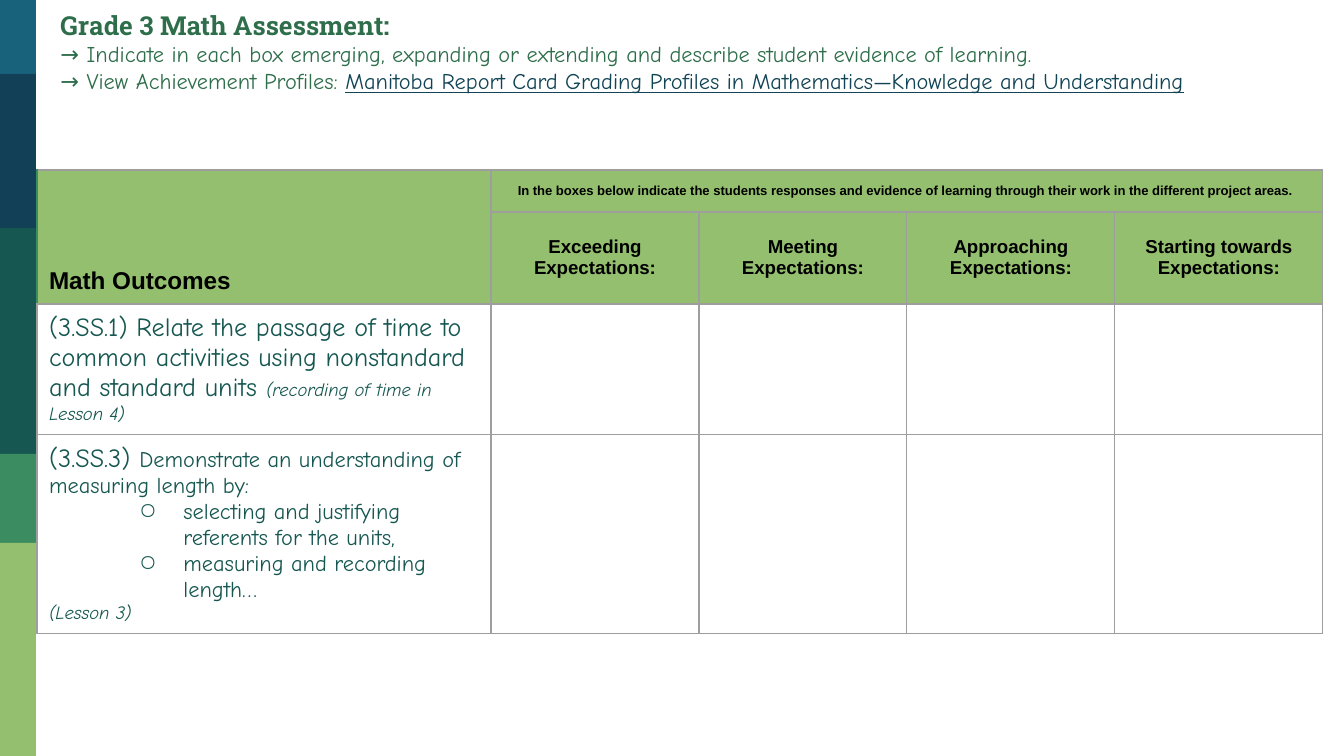
from lxml import etree
from pptx import Presentation
from pptx import util as u
from pptx.dml.color import RGBColor
from pptx.enum import shapes, text
from pptx.oxml import ns

WIDTH, HEIGHT = 1344, 756
SCALE = 9144000 / WIDTH  # EMU in one px

COLOURS = {
    "blue": "18637B", "navy": "124057", "pine": "165751", "jade": "3B8D61",
    "lime": "94BF6E", "title": "2E6E4B", "link": "114454",
    "grid": "9E9E9E", "black": "000000",
}
HEADINGS = ["Exceeding", "Meeting", "Approaching", "Starting towards"]


def px(length):
    return u.Emu(round(length * SCALE))


def colour(name):
    return RGBColor.from_string(COLOURS[name])


def write(para, spans, font, shade, **common):
    """Fill a paragraph with (words, format) spans."""
    for words, own in spans:
        span = para.add_run()
        span.text = words
        look = {"bold": False, **common, **own}
        span.font.name = font
        span.font.size = u.Pt(look["size"])
        span.font.bold = look["bold"]
        span.font.italic = look.get("italic", False)
        span.font.underline = look.get("underline", False)
        span.font.color.rgb = colour(look.get("shade", shade))


def add_sidebar(page, left, top, width):
    bands = [("blue", 0, 78), ("navy", 74, 156), ("pine", 228, 226),
             ("jade", 454, 89), ("lime", 543, 213)]
    for name, offset, height in bands:
        band = page.shapes.add_shape(shapes.MSO_SHAPE.RECTANGLE, px(left), px(top + offset),
                                     px(width), px(height))
        band.shadow.inherit = False
        band.fill.solid()
        band.fill.fore_color.rgb = colour(name)
        band.line.fill.background()


def add_title(page, left, top, width, height):
    title = page.shapes.title
    title.left, title.top = px(left), px(top)
    title.width, title.height = px(width), px(height)
    frame = title.text_frame
    frame.word_wrap = True
    frame.auto_size = text.MSO_AUTO_SIZE.NONE
    frame.vertical_anchor = text.MSO_ANCHOR.MIDDLE
    frame.margin_left = frame.margin_right = u.Inches(0.1)
    frame.margin_top = frame.margin_bottom = u.Inches(0.1)
    lines = [
        ("Roboto Slab", [("Grade 3 Math Assessment:", {"size": 14, "bold": True})]),
        ("Comic Neue", [("→ Indicate in each box emerging, expanding or extending and "
                         "describe student evidence of learning.", {})]),
        ("Comic Neue", [("→ View Achievement Profiles: ", {}),
                        ("Manitoba Report Card Grading Profiles in Mathematics—Knowledge "
                         "and Understanding", {"shade": "link", "underline": True})]),
    ]
    for index, (font, spans) in enumerate(lines):
        para = frame.add_paragraph() if index else frame.paragraphs[0]
        para.alignment = text.PP_ALIGN.LEFT
        write(para, spans, font, "title", size=12)


def add_bullet(para):
    props = para._p.get_or_add_pPr()
    props.set("marL", str(u.Inches(1)))
    props.set("indent", str(u.Inches(-0.33)))
    shade = etree.SubElement(props, ns.qn("a:buClr"))
    etree.SubElement(shade, ns.qn("a:srgbClr"), val=COLOURS["pine"])
    etree.SubElement(props, ns.qn("a:buChar"), char="○")


def set_borders(cell, left="grid"):
    props = cell._tc.get_or_add_tcPr()
    sides = [("lnL", left), ("lnR", "grid"), ("lnT", "grid"), ("lnB", "grid")]
    for index, (side, name) in enumerate(sides):
        line = etree.Element(ns.qn("a:" + side), w=str(u.Pt(0.75)))
        fill = etree.SubElement(line, ns.qn("a:solidFill"))
        etree.SubElement(fill, ns.qn("a:srgbClr"), val=COLOURS[name])
        props.insert(index, line)


def format_cell(cell, row, column):
    cell.margin_left = cell.margin_right = u.Inches(0.09)
    cell.margin_top = cell.margin_bottom = u.Inches(0.07)
    if row < 2:
        cell.fill.solid()
        cell.fill.fore_color.rgb = colour("lime")
        cell.vertical_anchor = text.MSO_ANCHOR.MIDDLE
    else:
        cell.fill.background()
    set_borders(cell, "jade" if row < 2 and column == 0 else "grid")


def write_heading(cell, words, size, align=text.PP_ALIGN.CENTER):
    para = cell.text_frame.paragraphs[0]
    para.alignment = align
    write(para, [(words, {})], "Arial", "black", size=size, bold=True)


def write_outcome(cell, paragraphs):
    """Each paragraph is a pair: whether it has a bullet, and its spans."""
    for index, (bulleted, spans) in enumerate(paragraphs):
        frame = cell.text_frame
        para = frame.add_paragraph() if index else frame.paragraphs[0]
        if bulleted:
            para.level = 1
            add_bullet(para)
        write(para, spans, "Comic Neue", "pine", size=12)


def add_outcomes(page, left, top, columns, rows):
    frame = page.shapes.add_table(len(rows), len(columns), px(left), px(top),
                                  px(sum(columns)), px(sum(rows)))
    table = frame.table
    table.first_row = table.horz_banding = False
    for column, width in zip(table.columns, columns):
        column.width = px(width)
    for row, height in zip(table.rows, rows):
        row.height = px(height)
    for row in range(len(rows)):
        for column in range(len(columns)):
            format_cell(table.cell(row, column), row, column)

    # Header rows
    corner = table.cell(0, 0)
    corner.merge(table.cell(1, 0))
    corner.vertical_anchor = text.MSO_ANCHOR.BOTTOM
    write_heading(corner, "Math Outcomes", 13, text.PP_ALIGN.LEFT)
    table.cell(0, 1).merge(table.cell(0, 4))
    write_heading(table.cell(0, 1), "In the boxes below indicate the students responses and "
                  "evidence of learning through their work in the different project areas. ", 7)
    for column, heading in enumerate(HEADINGS, 1):
        write_heading(table.cell(1, column), heading + " Expectations:", 10)

    # Outcome rows
    large, note = {"size": 14}, {"size": 10, "italic": True}
    write_outcome(table.cell(2, 0), [
        (False, [("(3.SS.1) Relate the passage of time to common activities using "
                  "nonstandard and standard units ", large),
                 ("(recording of time in Lesson 4)", note)]),
    ])
    write_outcome(table.cell(3, 0), [
        (False, [("(3.SS.3) ", large),
                 ("Demonstrate an understanding of measuring length by:", {})]),
        (True, [("selecting and justifying referents for the units,", {})]),
        (True, [("measuring and recording length…", {})]),
        (False, [("(Lesson 3)", note)]),
    ])


def main():
    deck = Presentation()
    deck.slide_width, deck.slide_height = px(WIDTH), px(HEIGHT)
    page = deck.slides.add_slide(deck.slide_layouts[5])
    add_sidebar(page, 0, 0, 36)
    add_title(page, 47, 0, 1285, 103)
    add_outcomes(page, 37, 170, [454] + [208] * 4, [42, 92, 130, 198])
    deck.save("out.pptx")


if __name__ == "__main__":
    main()
